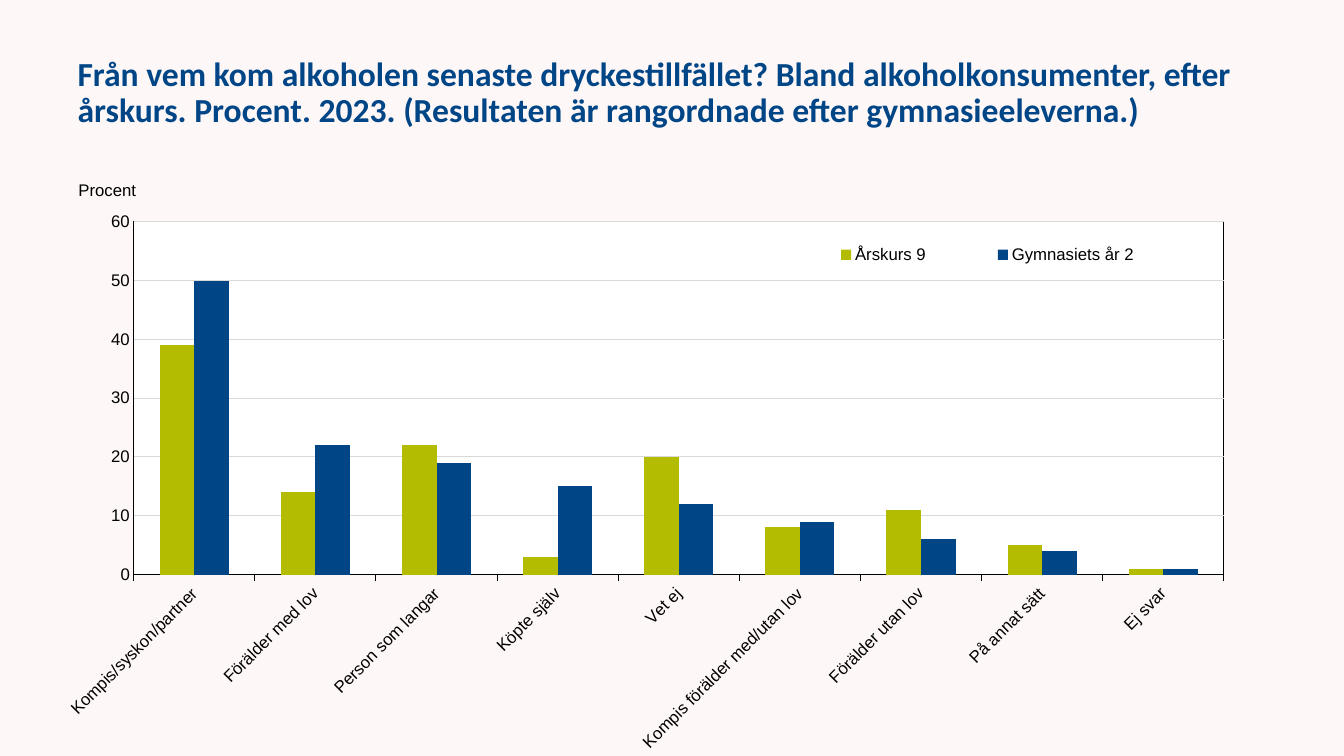
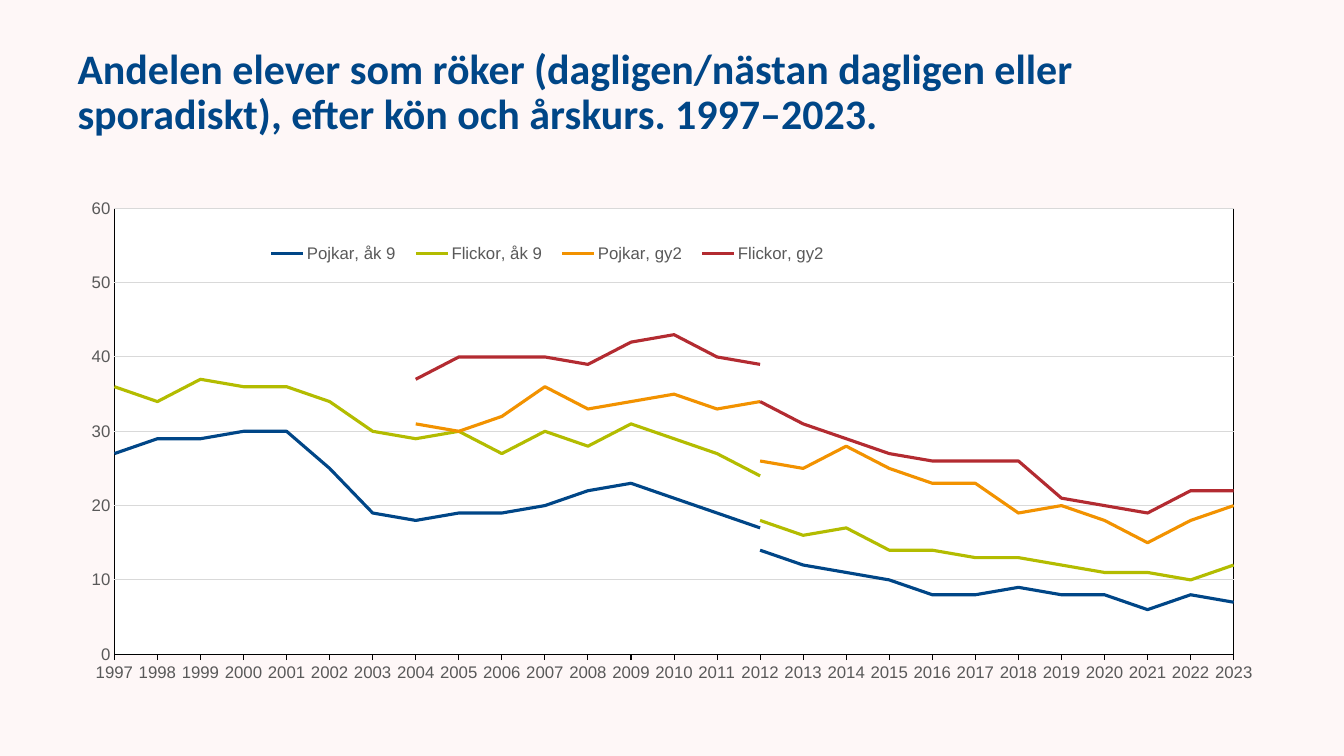
from dataclasses import dataclass
from typing import Optional

from lxml.etree import SubElement
from pptx import Presentation
from pptx.chart.chart import Chart
from pptx.chart.data import CategoryChartData
from pptx.dml.color import RGBColor
from pptx.enum.chart import XL_CHART_TYPE, XL_LEGEND_POSITION, XL_TICK_MARK
from pptx.enum.text import MSO_ANCHOR, MSO_AUTO_SIZE, PP_ALIGN
from pptx.oxml import parse_xml
from pptx.oxml.ns import nsdecls, qn
from pptx.slide import Slide
from pptx.text.text import Font
from pptx.util import Cm, Pt

COLORS = {
    "background": "FEF7F7",
    "plot": "FFFFFF",
    "blue": "004687",
    "green": "B3BC00",
    "orange": "F29200",
    "red": "B32B31",
    "black": "000000",
    "gray": "595959",
    "grid": "D9D9D9",
}
TITLE_FONT = "Calibri"
CHART_FONT = "Arial"
LEFT = Cm(1.7)
CONTENT_WIDTH = Cm(30.48)
TITLE_TOP = Cm(0.76)
TITLE_HEIGHT = Cm(3.18)
HAIRLINE = Pt(0.75)
VALUE_TITLE_CORNER = (0.46, 0)


@dataclass(frozen=True)
class Series:
    name: str
    color: str
    values: tuple[float, ...]
    offset: int = 0
    in_legend: bool = True


@dataclass(frozen=True)
class ChartSlide:
    """Boxes are left, top, width and height in percent of the chart."""

    title: str
    title_size: int
    title_width: int
    kind: XL_CHART_TYPE
    chart_top: int
    chart_height: int
    categories: tuple[str, ...]
    series: tuple[Series, ...]
    text_color: str
    plot_box: tuple[float, ...]
    legend_box: tuple[float, ...]
    label_angle: int = 0
    value_title: Optional[str] = None


def rgb(color: str) -> RGBColor:
    return RGBColor.from_string(COLORS[color])


def style_font(font: Font, color: str) -> None:
    font.name = CHART_FONT
    font.size = Pt(12)
    font.bold = False
    font.color.rgb = rgb(color)


def place(part, box: tuple[float, ...], inner: bool = False) -> None:
    """Give a plot area, legend or axis title a manual layout."""
    for old in part.findall(qn("c:layout")):
        part.remove(old)
    layout = parse_xml(f"<c:layout {nsdecls('c')}><c:manualLayout/></c:layout>")
    manual = layout[0]
    if inner:
        SubElement(manual, qn("c:layoutTarget")).set("val", "inner")
    for tag in ("xMode", "yMode"):
        SubElement(manual, qn(f"c:{tag}")).set("val", "edge")
    for tag, percent in zip("xywh", box):
        SubElement(manual, qn(f"c:{tag}")).set("val", f"{percent / 100:.4f}")
    overlay = part.find(qn("c:overlay"))
    part.insert(0 if overlay is None else part.index(overlay), layout)


def add_title(slide: Slide, content: ChartSlide) -> None:
    title = slide.shapes.title
    title.left, title.top = LEFT, TITLE_TOP
    title.width, title.height = content.title_width, TITLE_HEIGHT
    frame = title.text_frame
    frame.text = content.title
    frame.word_wrap = True
    frame.auto_size = MSO_AUTO_SIZE.NONE
    frame.vertical_anchor = MSO_ANCHOR.MIDDLE
    paragraph = frame.paragraphs[0]
    paragraph.alignment = PP_ALIGN.LEFT
    paragraph.line_spacing = 0.9
    paragraph.font.name = TITLE_FONT
    paragraph.font.size = Pt(content.title_size)
    paragraph.font.bold = True
    paragraph.font.color.rgb = rgb("blue")


def style_plot_area(chart: Chart, box: tuple[float, ...]) -> None:
    area = chart._chartSpace.chart.plotArea
    place(area, box, inner=True)
    area.append(parse_xml(
        f"<c:spPr {nsdecls('c', 'a')}>"
        f'<a:solidFill><a:srgbClr val="{COLORS["plot"]}"/></a:solidFill>'
        f'<a:ln w="{HAIRLINE}"><a:solidFill><a:srgbClr val="{COLORS["black"]}"/>'
        "</a:solidFill></a:ln></c:spPr>"
    ))


def style_axes(chart: Chart, content: ChartSlide) -> None:
    categories, values = chart.category_axis, chart.value_axis
    for axis in (categories, values):
        style_font(axis.tick_labels.font, content.text_color)
        axis.minor_tick_mark = XL_TICK_MARK.NONE
        axis.format.line.width = HAIRLINE
        axis.format.line.color.rgb = rgb("black")
    categories.major_tick_mark = XL_TICK_MARK.OUTSIDE
    categories.has_major_gridlines = False
    body = categories._element.find(qn("c:txPr")).find(qn("a:bodyPr"))
    body.set("rot", str(content.label_angle * 60000))

    values.major_tick_mark = XL_TICK_MARK.NONE
    values.minimum_scale, values.maximum_scale, values.major_unit = 0, 60, 10
    values.tick_labels.number_format = "0"
    values.tick_labels.number_format_is_linked = False
    values.has_major_gridlines = True
    values.major_gridlines.format.line.width = HAIRLINE
    values.major_gridlines.format.line.color.rgb = rgb("grid")

    is_line = content.kind == XL_CHART_TYPE.LINE
    if is_line:
        values.format.line.fill.background()
    element = values._element
    for old in element.findall(qn("c:crossBetween")):
        element.remove(old)
    crossing = "midCat" if is_line else "between"
    element.find(qn("c:crosses")).addnext(
        parse_xml(f'<c:crossBetween {nsdecls("c")} val="{crossing}"/>'))

    values.has_title = content.value_title is not None
    if content.value_title:
        frame = values.axis_title.text_frame
        frame.text = content.value_title
        style_font(frame.paragraphs[0].font, content.text_color)
        frame._txBody.find(qn("a:bodyPr")).set("rot", "0")
        place(values.axis_title._element, VALUE_TITLE_CORNER)


def style_series(chart: Chart, content: ChartSlide) -> None:
    plot = chart.plots[0]
    plot.vary_by_categories = False
    is_line = content.kind == XL_CHART_TYPE.LINE
    if not is_line:
        plot.gap_width = 150
        plot.overlap = 0
    for drawn, series in zip(plot.series, content.series):
        if is_line:
            drawn.smooth = False
            drawn.format.line.width = Pt(2.25)
            drawn.format.line.color.rgb = rgb(series.color)
        else:
            drawn.format.fill.solid()
            drawn.format.fill.fore_color.rgb = rgb(series.color)


def add_legend(chart: Chart, content: ChartSlide) -> None:
    chart.has_legend = True
    legend = chart.legend
    legend.position = XL_LEGEND_POSITION.BOTTOM
    legend.include_in_layout = False
    style_font(legend.font, content.text_color)
    place(legend._element, content.legend_box)
    layout = legend._element.find(qn("c:layout"))
    for index, series in enumerate(content.series):
        if not series.in_legend:
            layout.addprevious(parse_xml(
                f'<c:legendEntry {nsdecls("c")}><c:idx val="{index}"/>'
                '<c:delete val="1"/></c:legendEntry>'))


def add_chart(slide: Slide, content: ChartSlide) -> None:
    data = CategoryChartData(number_format="0")
    data.categories = content.categories
    for series in content.series:
        missing = len(content.categories) - series.offset - len(series.values)
        data.add_series(
            series.name,
            (None,) * series.offset + series.values + (None,) * missing)
    chart = slide.shapes.add_chart(
        content.kind, LEFT, content.chart_top, CONTENT_WIDTH,
        content.chart_height, data).chart
    chart.has_title = False
    style_font(chart.font, content.text_color)
    style_series(chart, content)
    style_axes(chart, content)
    style_plot_area(chart, content.plot_box)
    add_legend(chart, content)


ALCOHOL_SOURCE = ChartSlide(
    title="Från vem kom alkoholen senaste dryckestillfället? Bland "
          "alkoholkonsumenter, efter årskurs. Procent. 2023. (Resultaten är "
          "rangordnade efter gymnasieeleverna.)",
    title_size=24,
    title_width=Cm(31.29),
    kind=XL_CHART_TYPE.COLUMN_CLUSTERED,
    chart_top=Cm(4.45),
    chart_height=Cm(14.6),
    categories=(
        "Kompis/syskon/partner", "Förälder med lov", "Person som langar",
        "Köpte själv", "Vet ej", "Kompis förälder med/utan lov",
        "Förälder utan lov", "På annat sätt", "Ej svar"),
    series=(
        Series("Årskurs 9", "green", (39, 14, 22, 3, 20, 8, 11, 5, 1)),
        Series("Gymnasiets år 2", "blue", (50, 22, 19, 15, 12, 9, 6, 4, 1)),
    ),
    text_color="black",
    plot_box=(5.3, 7.8, 90.3, 60.9),
    legend_box=(58.4, 10.5, 35.25, 6),
    label_angle=-45,
    value_title="Procent",
)

FIRST_YEAR, GYMNASIUM_START, SERIES_BREAK, LAST_YEAR = 1997, 2004, 2012, 2023


def smoking_group(name: str, color: str, number: int, start: int,
                  before: tuple[float, ...],
                  after: tuple[float, ...]) -> tuple[Series, Series]:
    """Split one group into the lines before and after the series break."""
    return (
        Series(name, color, before, start - FIRST_YEAR),
        Series(f"Series {number}", color, after, SERIES_BREAK - FIRST_YEAR,
               in_legend=False),
    )


SMOKING = ChartSlide(
    title="Andelen elever som röker (dagligen/nästan dagligen eller "
          "sporadiskt), efter kön och årskurs. 1997–2023.",
    title_size=30,
    title_width=CONTENT_WIDTH,
    kind=XL_CHART_TYPE.LINE,
    chart_top=Cm(4.75),
    chart_height=Cm(13.54),
    categories=tuple(str(year) for year in range(FIRST_YEAR, LAST_YEAR + 1)),
    series=(
        *smoking_group(
            "Pojkar, åk 9", "blue", 2, FIRST_YEAR,
            (27, 29, 29, 30, 30, 25, 19, 18, 19, 19, 20, 22, 23, 21, 19, 17),
            (14, 12, 11, 10, 8, 8, 9, 8, 8, 6, 8, 7)),
        *smoking_group(
            "Flickor, åk 9", "green", 4, FIRST_YEAR,
            (36, 34, 37, 36, 36, 34, 30, 29, 30, 27, 30, 28, 31, 29, 27, 24),
            (18, 16, 17, 14, 14, 13, 13, 12, 11, 11, 10, 12)),
        *smoking_group(
            "Pojkar, gy2", "orange", 6, GYMNASIUM_START,
            (31, 30, 32, 36, 33, 34, 35, 33, 34),
            (26, 25, 28, 25, 23, 23, 19, 20, 18, 15, 18, 20)),
        *smoking_group(
            "Flickor, gy2", "red", 8, GYMNASIUM_START,
            (37, 40, 40, 40, 39, 42, 43, 40, 39),
            (34, 31, 29, 27, 26, 26, 26, 21, 20, 19, 22, 22)),
    ),
    text_color="gray",
    plot_box=(3.88, 3.7, 92.55, 83),
    legend_box=(15.65, 9.6, 48.1, 5),
)


def main() -> None:
    deck = Presentation()
    deck.slide_width, deck.slide_height = Cm(33.87), Cm(19.05)
    background = deck.slide_master.background.fill
    background.solid()
    background.fore_color.rgb = rgb("background")
    title_only = deck.slide_layouts[5]
    for content in (ALCOHOL_SOURCE, SMOKING):
        slide = deck.slides.add_slide(title_only)
        add_title(slide, content)
        add_chart(slide, content)
    deck.save("out.pptx")


if __name__ == "__main__":
    main()
